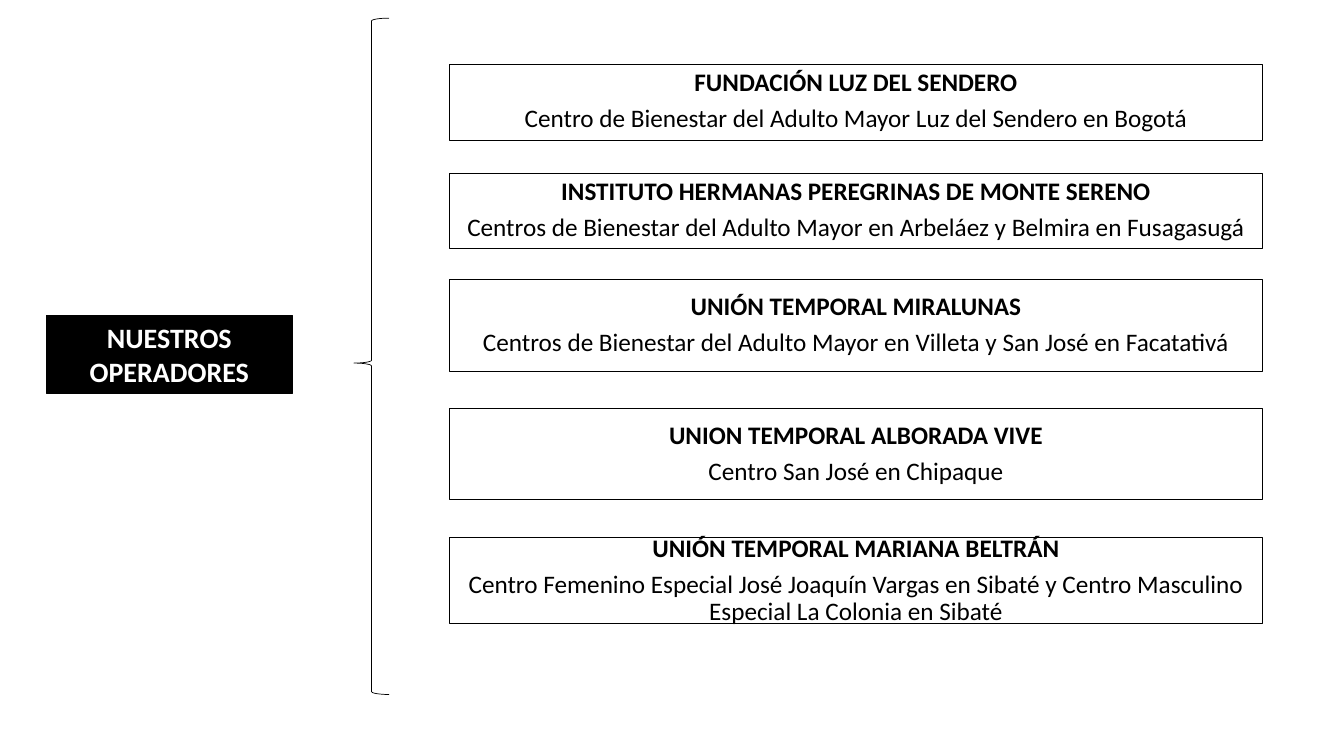
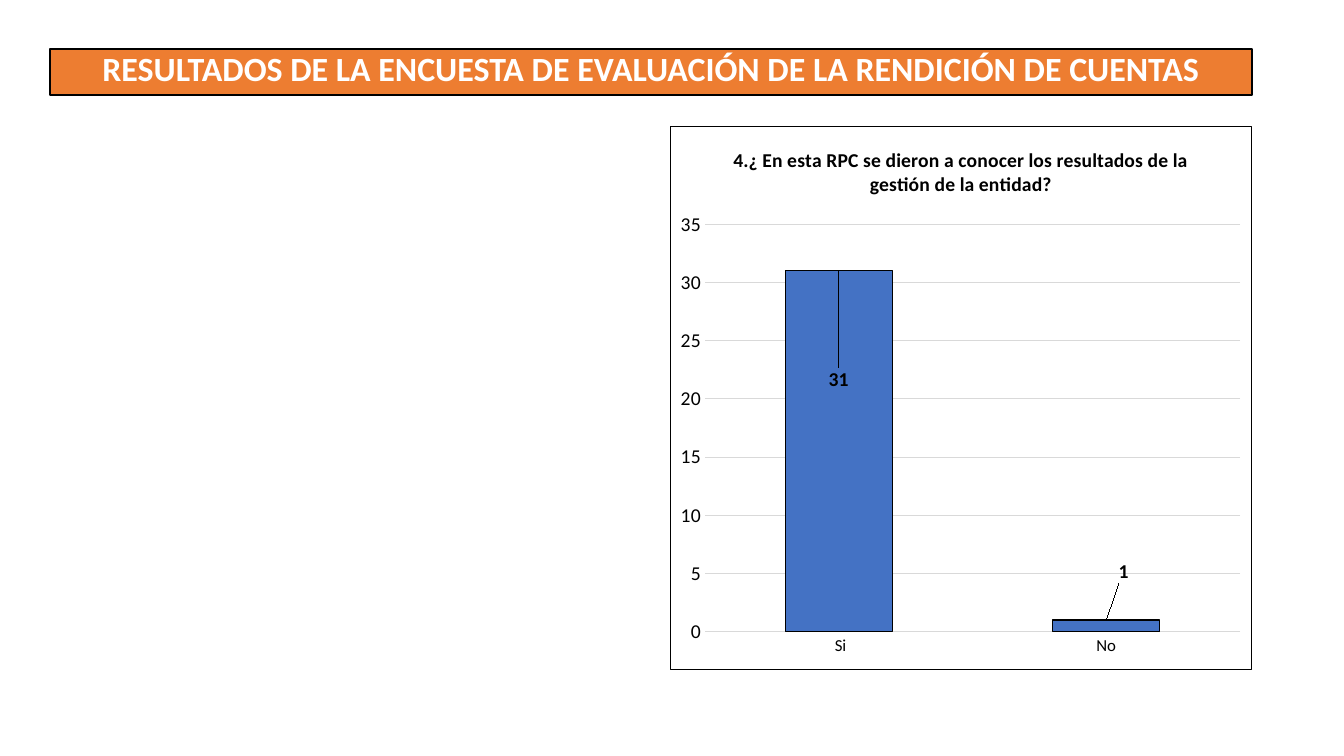
import pptx
import pptx.chart.data
import pptx.dml.color
import pptx.enum.chart
import pptx.enum.shapes
import pptx.enum.text
import pptx.oxml
import pptx.util
from pptx.util import Inches

COLOURS = {"black": "000000", "white": "FFFFFF", "orange": "ED7D31", "blue": "4472C4", "grid": "D9D9D9"}
FONT = "Calibri"
NS = (
    'xmlns:c="http://schemas.openxmlformats.org/drawingml/2006/chart" '
    'xmlns:a="http://schemas.openxmlformats.org/drawingml/2006/main"'
)
SHAPES = pptx.enum.shapes.MSO_SHAPE
ANCHORS = pptx.enum.text.MSO_ANCHOR


def style_font(font, size, colour="black", bold=False):
    for name, value in {"name": FONT, "size": pptx.util.Pt(size), "bold": bold}.items():
        setattr(font, name, value)
    font.color.rgb = pptx.dml.color.RGBColor.from_string(COLOURS[colour])


def add_box(page, kind, place, line_width, fill=None, lines=(), text_format=None, inset=None, anchor=ANCHORS.MIDDLE):
    box = page.shapes.add_shape(kind, *[Inches(length) for length in place])
    box.shadow.inherit = False
    if fill:
        box.fill.solid()
        box.fill.fore_color.rgb = pptx.dml.color.RGBColor.from_string(COLOURS[fill])
    else:
        box.fill.background()
    box.line.color.rgb = pptx.dml.color.RGBColor.from_string(COLOURS["black"])
    box.line.width = pptx.util.Pt(line_width)
    frame = box.text_frame
    frame.word_wrap = True
    frame.vertical_anchor = anchor
    if inset:
        for side in ("left", "top", "right", "bottom"):
            setattr(frame, f"margin_{side}", Inches(inset))
    for index, (text, size, colour, bold) in enumerate(lines):
        para = frame.add_paragraph() if index else frame.paragraphs[0]
        para.alignment = pptx.enum.text.PP_ALIGN.CENTER
        for name, value in (text_format or {}).items():
            setattr(para, name, value)
        span = para.add_run()
        span.text = text
        style_font(span.font, size, colour, bold)
    return box


deck = pptx.Presentation()
deck.slide_width = Inches(13.33)
deck.slide_height = Inches(7.5)
blank = deck.slide_layouts[6]

page = deck.slides.add_slide(blank)
add_box(page, SHAPES.RECTANGLE, (0.46, 3.13, 2.44, 0.77), 0.5, "black",
        [("NUESTROS OPERADORES", 20, "white", True)])

operators = [
    (0.64, 0.75, None, ANCHORS.TOP, "FUNDACIÓN LUZ DEL SENDERO",
     "Centro de Bienestar del Adulto Mayor Luz del Sendero en Bogotá"),
    (1.72, 0.75, None, ANCHORS.TOP, "INSTITUTO HERMANAS PEREGRINAS DE MONTE SERENO",
     "Centros de Bienestar del Adulto Mayor en Arbeláez y Belmira en Fusagasugá"),
    (2.77, 0.92, 0.07, ANCHORS.MIDDLE, "UNIÓN TEMPORAL MIRALUNAS",
     "Centros de Bienestar del Adulto Mayor en Villeta y San José en Facatativá"),
    (4.05, 0.91, 0.07, ANCHORS.MIDDLE, "UNION TEMPORAL ALBORADA VIVE",
     "Centro San José en Chipaque"),
    (5.33, 0.86, 0.07, ANCHORS.MIDDLE, "UNIÓN TEMPORAL MARIANA BELTRÁN",
     "Centro Femenino Especial José Joaquín Vargas en Sibaté y Centro Masculino Especial La Colonia en Sibaté"),
]
operator_format = {"line_spacing": 0.9, "space_after": pptx.util.Pt(6.3)}
for top, height, inset, anchor, operator, centres in operators:
    add_box(page, SHAPES.RECTANGLE, (4.46, top, 8.06, height), 0.75,
            lines=[(operator, 18, "black", True), (centres, 18, "black", False)],
            text_format=operator_format, inset=inset, anchor=anchor)

brace = add_box(page, SHAPES.LEFT_BRACE, (3.51, 0.18, 0.35, 6.71), 0.5)
brace.adjustments[0] = 0.08
brace.adjustments[1] = 0.51

page = deck.slides.add_slide(blank)
survey = pptx.chart.data.CategoryChartData()
survey.categories = [" Si", "No"]
survey.add_series("Series 1", (31, 1))
chart = page.shapes.add_chart(
    pptx.enum.chart.XL_CHART_TYPE.COLUMN_CLUSTERED,
    Inches(6.64), Inches(1.25), Inches(5.78), Inches(5.4), survey,
).chart
style_font(chart.font, 10)
chart.has_legend = False
chart.has_title = True
title = chart.chart_title.text_frame
title.text = "4.¿ En esta RPC se dieron a conocer los resultados de la gestión de la entidad?"
style_font(title.paragraphs[0].runs[0].font, 14, bold=True)
chart.chart_title.include_in_layout = False

for axis, size in ((chart.category_axis, 12), (chart.value_axis, 14)):
    axis.major_tick_mark = pptx.enum.chart.XL_TICK_MARK.NONE
    axis.minor_tick_mark = pptx.enum.chart.XL_TICK_MARK.NONE
    axis.format.line.fill.background()
    style_font(axis.tick_labels.font, size)
for name, value in {"minimum_scale": 0, "maximum_scale": 35, "major_unit": 5}.items():
    setattr(chart.value_axis, name, value)
gridline = chart.value_axis.major_gridlines.format.line
gridline.color.rgb = pptx.dml.color.RGBColor.from_string(COLOURS["grid"])
gridline.width = pptx.util.Pt(0.75)

plot = chart.plots[0]
plot.gap_width = 150
plot.vary_by_categories = False
answers = plot.series[0]
answers.format.fill.solid()
answers.format.fill.fore_color.rgb = pptx.dml.color.RGBColor.from_string(COLOURS["blue"])
answers.format.line.color.rgb = pptx.dml.color.RGBColor.from_string(COLOURS["black"])
answers.format.line.width = pptx.util.Pt(0.75)
answers.data_labels.show_value = True
style_font(answers.data_labels.font, 14, bold=True)

for index, (right, down) in enumerate([(0, 0.23), (0.03, -0.06)]):
    label = answers.points[index].data_label
    style_font(label.font, 14, bold=True)
    label.position = pptx.enum.chart.XL_LABEL_POSITION.OUTSIDE_END
    offset = pptx.oxml.parse_xml(
        f'<c:layout {NS}><c:manualLayout><c:x val="{right}"/><c:y val="{down}"/></c:manualLayout></c:layout>'
    )
    answers.data_labels._element.findall("{*}dLbl")[index].find("{*}idx").addnext(offset)

plot_area = chart._chartSpace.chart.plotArea
for old_layout in plot_area.findall("{*}layout"):
    plot_area.remove(old_layout)
plot_area.insert(0, pptx.oxml.parse_xml(
    f'<c:layout {NS}><c:manualLayout><c:layoutTarget val="inner"/>'
    '<c:xMode val="edge"/><c:yMode val="edge"/><c:x val="0.06"/><c:y val="0.18"/>'
    '<c:w val="0.92"/><c:h val="0.75"/></c:manualLayout></c:layout>'
))
chart._chartSpace.chart.addnext(pptx.oxml.parse_xml(
    f'<c:spPr {NS}><a:solidFill><a:srgbClr val="{COLOURS["white"]}"/></a:solidFill>'
    f'<a:ln w="{pptx.util.Pt(0.75)}"><a:solidFill><a:srgbClr val="{COLOURS["black"]}"/></a:solidFill></a:ln></c:spPr>'
))

add_box(page, SHAPES.RECTANGLE, (0.5, 0.49, 11.92, 0.45), 1.5, "orange",
        [("RESULTADOS DE LA ENCUESTA DE EVALUACIÓN DE LA RENDICIÓN DE CUENTAS", 24.2, "white", True)],
        {"line_spacing": 0.8})

deck.save("out.pptx")
